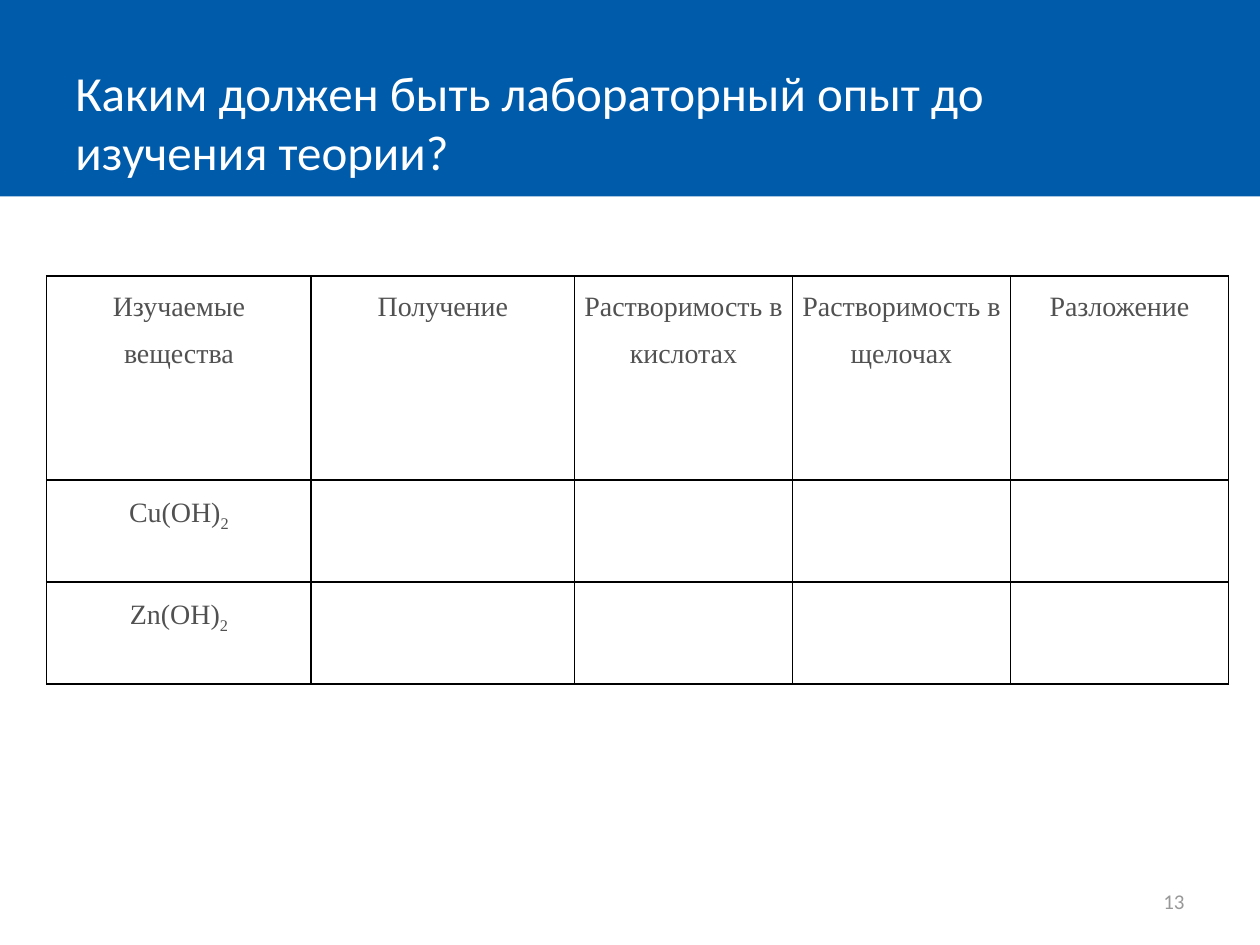
from lxml.etree import SubElement
from pptx import Presentation
from pptx.dml.color import RGBColor
from pptx.enum.shapes import MSO_SHAPE as Shape
from pptx.enum.text import MSO_ANCHOR as Anchor, PP_ALIGN as Align
from pptx.oxml.ns import qn
from pptx.util import Inches, Pt

BLUE = RGBColor(0x00, 0x5C, 0xAB)
WHITE = RGBColor(0xFF, 0xFF, 0xFF)
GRAY = RGBColor(0x98, 0x98, 0x98)
DARK = RGBColor(0x51, 0x51, 0x51)
BLACK = RGBColor(0x00, 0x00, 0x00)

TITLE = {"name": "Calibri", "size": Pt(28), "color": WHITE}
NUMBER = {"name": "Calibri", "size": Pt(12), "color": GRAY}
CELL = {"name": "Times New Roman", "size": Pt(16), "color": DARK}

COLUMNS = [2.1, 2.09, 1.73, 1.73, 1.73]
ROWS = [1.62, 0.81, 0.81]
HEADINGS = ["Изучаемые вещества", "Получение", "Растворимость в кислотах",
            "Растворимость в щелочах", "Разложение"]
SUBSTANCES = ["Cu(OH)", "Zn(OH)"]


class SlideBuilder:
    """Holds the current slide; positions are shares of its size."""

    def __init__(self, deck):
        self.width, self.height = deck.slide_width, deck.slide_height
        self.slide = deck.slides.add_slide(deck.slide_layouts[6])

    def place(self, left, top, width, height):
        return (int(left * self.width), int(top * self.height),
                int(width * self.width), int(height * self.height))

    def add_span(self, para, text, style, baseline=0):
        span = para.add_run()
        span.text = text
        for key, value in style.items():
            if key == "color":
                span.font.color.rgb = value
            else:
                setattr(span.font, key, value)
        if baseline:
            span.font._element.set("baseline", str(baseline * 1000))

    def band(self, area, color):
        box = self.slide.shapes.add_shape(Shape.RECTANGLE, *self.place(*area))
        box.shadow.inherit = False
        box.fill.solid()
        box.fill.fore_color.rgb = color
        box.line.fill.background()

    def text(self, area, text, style, align, anchor):
        frame = self.slide.shapes.add_textbox(*self.place(*area)).text_frame
        frame.word_wrap = True
        frame.vertical_anchor = anchor
        para = frame.paragraphs[0]
        para.alignment = align
        self.add_span(para, text, style)

    def border(self, cell):
        properties = cell._tc.get_or_add_tcPr()
        for index, side in enumerate(("lnL", "lnR", "lnT", "lnB")):
            line = properties.makeelement(qn(f"a:{side}"), {"w": str(Pt(1))})
            fill = SubElement(line, qn("a:solidFill"))
            SubElement(fill, qn("a:srgbClr"), val=str(BLACK))
            properties.insert(index, line)

    def table(self, area, columns, rows):
        table = self.slide.shapes.add_table(
            len(rows), len(columns), *self.place(*area)).table
        for flag in ("first_row", "horz_banding"):
            setattr(table, flag, False)
        for column, width in zip(table.columns, columns):
            column.width = Inches(width)
        for row, height in zip(table.rows, rows):
            row.height = Inches(height)
        margins = {"margin_left": Inches(0.07), "margin_right": Inches(0.07),
                   "margin_top": 0, "margin_bottom": 0}
        for cell in table.iter_cells():
            for key, value in margins.items():
                setattr(cell, key, value)
            cell.fill.background()
            self.border(cell)
        return table

    def cell_text(self, cell, text, subscript=""):
        para = cell.text_frame.paragraphs[0]
        para.alignment = Align.CENTER
        para.line_spacing = 1.5
        self.add_span(para, text, CELL)
        if subscript:
            self.add_span(para, subscript, CELL, baseline=-25)


def main():
    deck = Presentation()
    deck.slide_width, deck.slide_height = Inches(10), Inches(7.5)
    page = SlideBuilder(deck)

    # Title band
    page.band((0, 0, 1, 0.208), BLUE)
    page.text((0.05, 0.03, 0.9, 0.167),
              "Каким должен быть лабораторный опыт до изучения теории?",
              TITLE, Align.LEFT, Anchor.BOTTOM)

    # Slide number
    page.text((0.717, 0.927, 0.233, 0.053), "13", NUMBER,
              Align.RIGHT, Anchor.MIDDLE)

    # Table of experiments: headings, then one row for each hydroxide
    table = page.table((0.037, 0.292, 0.938, 0.43), COLUMNS, ROWS)
    for column, heading in enumerate(HEADINGS):
        page.cell_text(table.cell(0, column), heading)
    for row, substance in enumerate(SUBSTANCES, start=1):
        page.cell_text(table.cell(row, 0), substance, subscript="2")

    deck.save("out.pptx")


if __name__ == "__main__":
    main()
